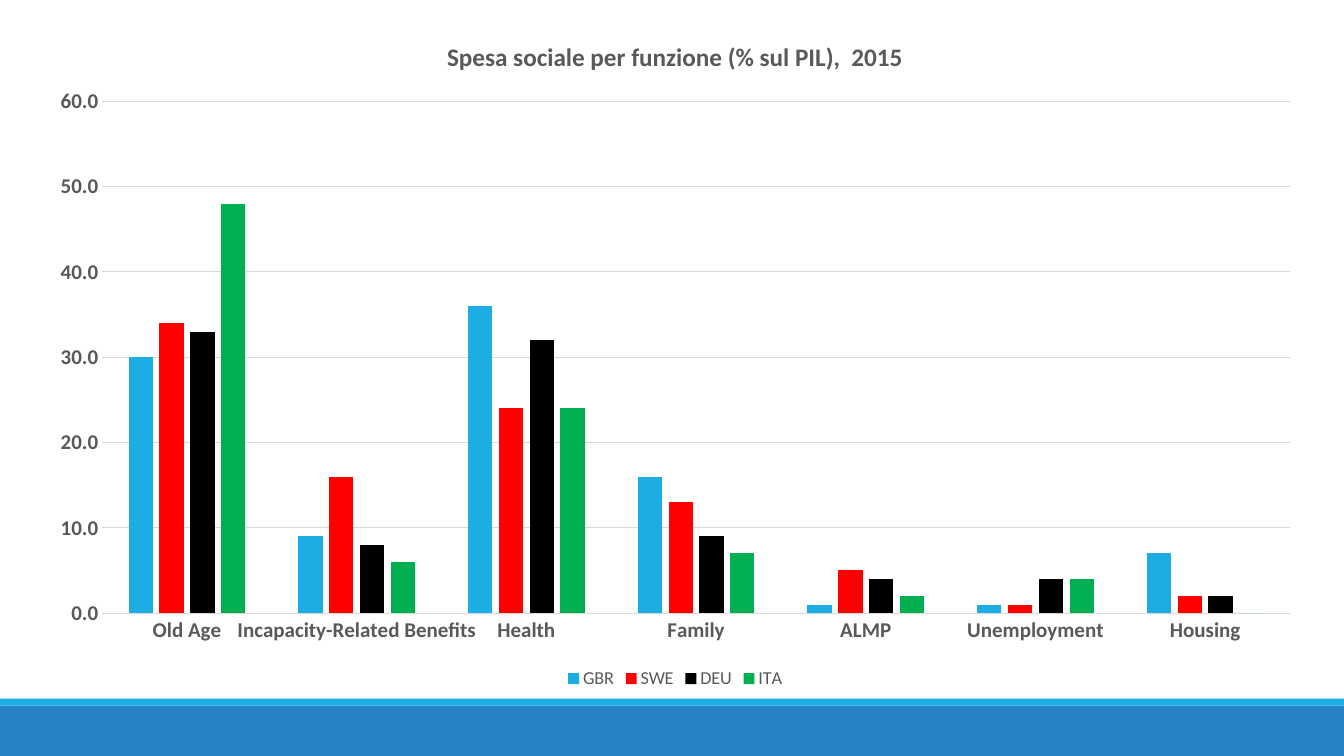
from dataclasses import dataclass

from lxml import etree
from pptx import Presentation
from pptx.chart.data import CategoryChartData
from pptx.dml.color import RGBColor
from pptx.enum.chart import XL_CHART_TYPE, XL_LEGEND_POSITION, XL_TICK_MARK
from pptx.enum.shapes import MSO_SHAPE
from pptx.oxml.ns import qn
from pptx.util import Pt

COLUMNS = XL_CHART_TYPE.COLUMN_CLUSTERED
BOTTOM = XL_LEGEND_POSITION.BOTTOM
NO_TICK = XL_TICK_MARK.NONE
RECT = MSO_SHAPE.RECTANGLE
FACE = "Calibri"
GREY, PALE, SKY, BLUE = "595959", "D9D9D9", "1CADE4", "2683C6"
WIDTH, HEIGHT = 960, 540


@dataclass
class Box:
    left: float
    top: float
    width: float
    height: float


@dataclass
class Band:
    top: float
    height: float
    color: str


@dataclass
class Nation:
    name: str
    color: str
    shares: tuple


GRAPH = Box(25, 11.5, 914.5, 484)
PLOT = Box(73, 72.3, 848.5, 365.7)
BANDS = (Band(504, 36, BLUE), Band(499, 5, SKY))
TITLE = "Spesa sociale per funzione (% sul PIL),  2015"
AREAS = ("Old Age", "Incapacity-Related Benefits", "Health", "Family",
         "ALMP", "Unemployment", "Housing")
NATIONS = (
    Nation("GBR", SKY, (30, 9, 36, 16, 1, 1, 7)),
    Nation("SWE", "FF0000", (34, 16, 24, 13, 5, 1, 2)),
    Nation("DEU", "000000", (33, 8, 32, 9, 4, 4, 2)),
    Nation("ITA", "00B050", (48, 6, 24, 7, 2, 4, 0)),
)


def rgb(code: str) -> RGBColor:
    return RGBColor.from_string(code)


def paint(fill, color: str) -> None:
    fill.solid()
    fill.fore_color.rgb = rgb(color)


def style(font, size: float, bold: bool = False, color: str = GREY) -> None:
    font.name = FACE
    font.size = Pt(size)
    font.bold = bold
    font.color.rgb = rgb(color)


def write(frame, text: str, **form) -> None:
    """Put one run of text in a frame, with its format."""
    run = frame.paragraphs[0].add_run()
    run.text = text
    style(run.font, **form)


def rule(line) -> None:
    """Give an axis or grid its thin pale line."""
    line.color.rgb = rgb(PALE)
    line.width = Pt(0.75)


def add_band(slide, band: Band) -> None:
    shape = slide.shapes.add_shape(
        RECT, Pt(0), Pt(band.top), Pt(WIDTH), Pt(band.height))
    shape.shadow.inherit = False
    paint(shape.fill, band.color)
    shape.line.fill.background()


def place_plot(chart) -> None:
    """Fix the inner plot area at PLOT, as shares of GRAPH."""
    area = chart._chartSpace.chart.plotArea
    for old in area.findall(qn("c:layout")):
        area.remove(old)
    layout = etree.Element(qn("c:layout"))
    area.insert(0, layout)
    manual = etree.SubElement(layout, qn("c:manualLayout"))
    parts = {
        "layoutTarget": "inner", "xMode": "edge", "yMode": "edge",
        "x": (PLOT.left - GRAPH.left) / GRAPH.width,
        "y": (PLOT.top - GRAPH.top) / GRAPH.height,
        "w": PLOT.width / GRAPH.width,
        "h": PLOT.height / GRAPH.height,
    }
    for tag, value in parts.items():
        etree.SubElement(manual, qn(f"c:{tag}")).set("val", str(value))


def set_axes(chart) -> None:
    areas, shares = chart.category_axis, chart.value_axis
    for axis in (areas, shares):
        axis.major_tick_mark = axis.minor_tick_mark = NO_TICK
        style(axis.tick_labels.font, size=15, bold=True)
        body = axis._element.txPr.bodyPr
        body.set("rot", "-60000000")
        body.set("vert", "horz")
    rule(areas.format.line)
    shares.format.line.fill.background()
    shares.has_major_gridlines = True
    rule(shares.major_gridlines.format.line)
    shares.minimum_scale, shares.maximum_scale = 0, 60
    shares.major_unit = 10
    shares.tick_labels.number_format = "0.0"
    shares.tick_labels.number_format_is_linked = False


def add_graph(slide) -> None:
    data = CategoryChartData(number_format="0.0")
    data.categories = AREAS
    for nation in NATIONS:
        data.add_series(nation.name, nation.shares)
    chart = slide.shapes.add_chart(
        COLUMNS, Pt(GRAPH.left), Pt(GRAPH.top),
        Pt(GRAPH.width), Pt(GRAPH.height), data).chart
    style(chart.font, size=10, color="000000")

    chart.has_title = True
    write(chart.chart_title.text_frame, TITLE, size=18, bold=True)
    chart.chart_title.include_in_layout = False

    chart.has_legend = True
    chart.legend.position = BOTTOM
    chart.legend.include_in_layout = False
    style(chart.legend.font, size=13)

    set_axes(chart)
    place_plot(chart)
    plot = chart.plots[0]
    plot.gap_width, plot.overlap = 219, -27
    plot.vary_by_categories = False
    for series, nation in zip(plot.series, NATIONS):
        paint(series.format.fill, nation.color)
        series.invert_if_negative = False


def main() -> None:
    deck = Presentation()
    deck.slide_width, deck.slide_height = Pt(WIDTH), Pt(HEIGHT)
    slide = deck.slides.add_slide(deck.slide_layouts[6])
    for band in BANDS:
        add_band(slide, band)
    add_graph(slide)
    deck.save("out.pptx")


if __name__ == "__main__":
    main()
